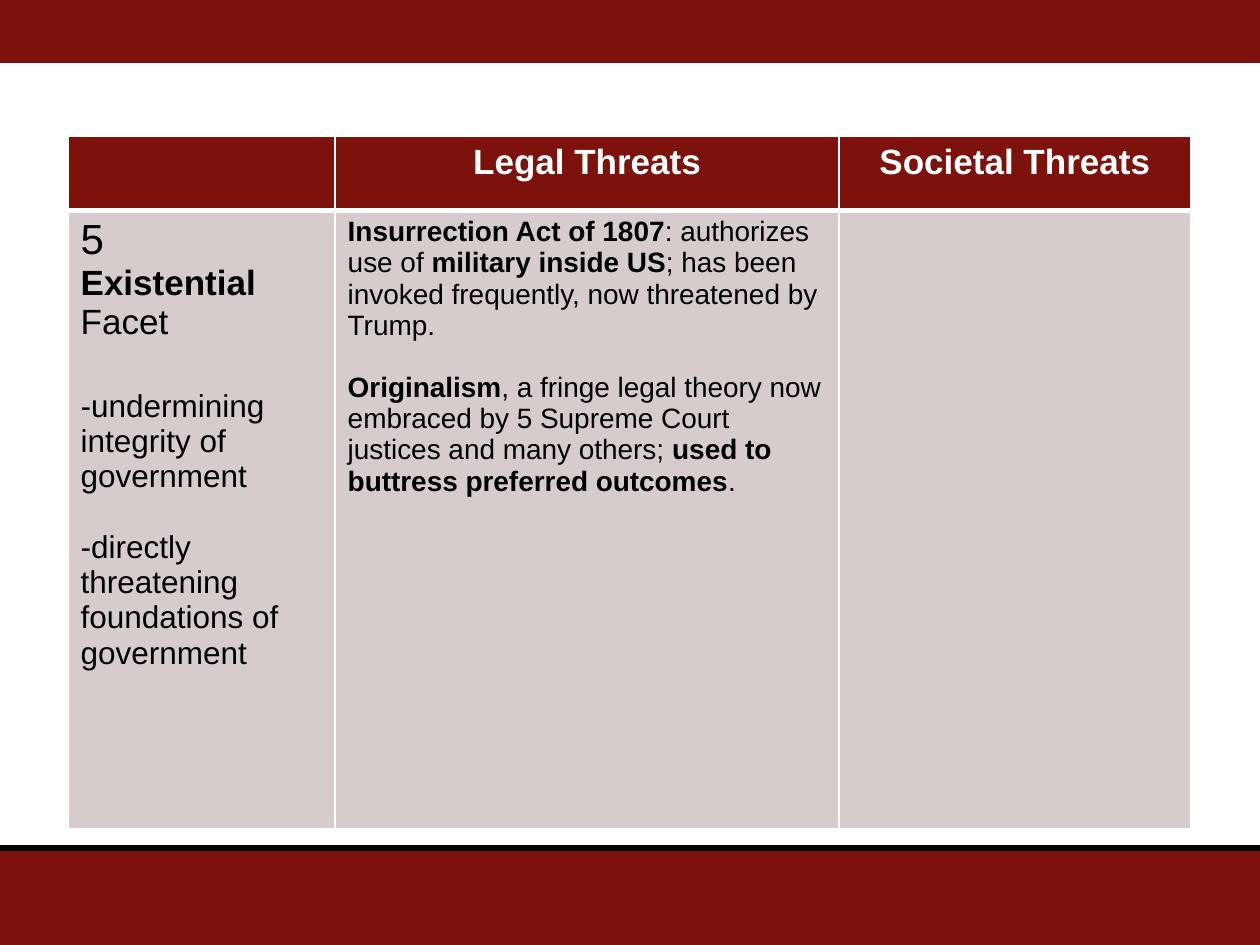
from dataclasses import dataclass

from lxml import etree
from pptx import Presentation
from pptx.dml.color import RGBColor
from pptx.enum.shapes import MSO_CONNECTOR, MSO_SHAPE
from pptx.enum.text import PP_ALIGN
from pptx.oxml.ns import qn
from pptx.util import Inches, Pt

RECTANGLE = MSO_SHAPE.RECTANGLE
STRAIGHT = MSO_CONNECTOR.STRAIGHT
CENTER = PP_ALIGN.CENTER
LEFT = PP_ALIGN.LEFT

FONT = "Arial"
COLORS = {
    "maroon": "7D110C",
    "body": "D7CCCC",
    "white": "FFFFFF",
    "black": "000000",
}
SLIDE_WIDTH, SLIDE_HEIGHT = 10, 7.5
COLUMN_WIDTHS = (2.12, 4, 2.79)
ROW_HEIGHTS = (0.59, 4.91)


@dataclass(frozen=True)
class TextRun:
    text: str
    bold: bool = False


@dataclass(frozen=True)
class Line:
    runs: tuple[TextRun, ...]
    size: int
    space_before: int = 0


@dataclass(frozen=True)
class RowStyle:
    fill: str
    text: str
    alignment: PP_ALIGN
    bottom_border: int


HEADER = RowStyle("maroon", "white", CENTER, 3)
BODY = RowStyle("body", "black", LEFT, 1)

FACET = (
    Line((TextRun("5"),), 24),
    Line((TextRun("Existential", True), TextRun(" Facet")), 20),
    Line((TextRun("-undermining integrity of government"),), 18, 27),
    Line((TextRun("-directly threatening foundations of government"),), 18, 20),
)
LEGAL = (
    Line((
        TextRun("Insurrection Act of 1807", True),
        TextRun(": authorizes use of "),
        TextRun("military inside US", True),
        TextRun("; has been invoked frequently, now threatened by Trump."),
    ), 16),
    Line((
        TextRun("Originalism", True),
        TextRun(", a fringe legal theory now embraced by 5 Supreme Court "
                "justices and many others; "),
        TextRun("used to buttress preferred outcomes", True),
        TextRun("."),
    ), 16, 18),
)
ROWS = (
    (HEADER, (
        (),
        (Line((TextRun("Legal Threats", True),), 20),),
        (Line((TextRun("Societal Threats", True),), 20),),
    )),
    (BODY, (FACET, LEGAL, ())),
)


def color(name: str) -> RGBColor:
    return RGBColor.from_string(COLORS[name])


def add_band(slide, top: float, height: float) -> None:
    band = slide.shapes.add_shape(
        RECTANGLE, 0, Inches(top), Inches(SLIDE_WIDTH), Inches(height))
    band.shadow.inherit = False
    band.fill.solid()
    band.fill.fore_color.rgb = color("maroon")
    band.line.fill.background()


def add_rule(slide, top: float, width: float) -> None:
    rule = slide.shapes.add_connector(
        STRAIGHT, 0, Inches(top), Inches(SLIDE_WIDTH), Inches(top))
    rule.line.color.rgb = color("black")
    rule.line.width = Pt(width)
    etree.SubElement(rule._element.spPr, qn("a:effectLst"))


def set_borders(cell, bottom_width: int, top_width: int) -> None:
    properties = cell._tc.get_or_add_tcPr()
    widths = {"a:lnL": 1, "a:lnR": 1, "a:lnT": top_width, "a:lnB": bottom_width}
    for tag, width in widths.items():
        border = etree.SubElement(properties, qn(tag), w=str(Pt(width)))
        fill = etree.SubElement(border, qn("a:solidFill"))
        etree.SubElement(fill, qn("a:srgbClr"), val=COLORS["white"])


def write_lines(cell, lines: tuple[Line, ...], style: RowStyle) -> None:
    text_frame = cell.text_frame
    for index, line in enumerate(lines):
        paragraph = text_frame.add_paragraph() if index else text_frame.paragraphs[0]
        paragraph.alignment = style.alignment
        if line.space_before:
            paragraph.space_before = Pt(line.space_before)
        for item in line.runs:
            run = paragraph.add_run()
            run.text = item.text
            run.font.name = FONT
            run.font.size = Pt(line.size)
            run.font.bold = item.bold
            run.font.color.rgb = color(style.text)


def add_threat_table(slide) -> None:
    table = slide.shapes.add_table(
        len(ROW_HEIGHTS), len(COLUMN_WIDTHS), Inches(0.54), Inches(1.08),
        Inches(sum(COLUMN_WIDTHS)), Inches(sum(ROW_HEIGHTS))).table
    for column, width in zip(table.columns, COLUMN_WIDTHS):
        column.width = Inches(width)
    top_width = 1
    for row, height, (style, contents) in zip(table.rows, ROW_HEIGHTS, ROWS):
        row.height = Inches(height)
        for cell, lines in zip(row.cells, contents):
            set_borders(cell, style.bottom_border, top_width)
            cell.fill.solid()
            cell.fill.fore_color.rgb = color(style.fill)
            write_lines(cell, lines, style)
        top_width = style.bottom_border


def main() -> None:
    presentation = Presentation()
    presentation.slide_width = Inches(SLIDE_WIDTH)
    presentation.slide_height = Inches(SLIDE_HEIGHT)
    slide = presentation.slides.add_slide(presentation.slide_layouts[6])
    add_band(slide, 6.75, 0.75)
    add_rule(slide, 6.73, 3.75)
    add_band(slide, 0, 0.5)
    add_threat_table(slide)
    presentation.save("out.pptx")


if __name__ == "__main__":
    main()
